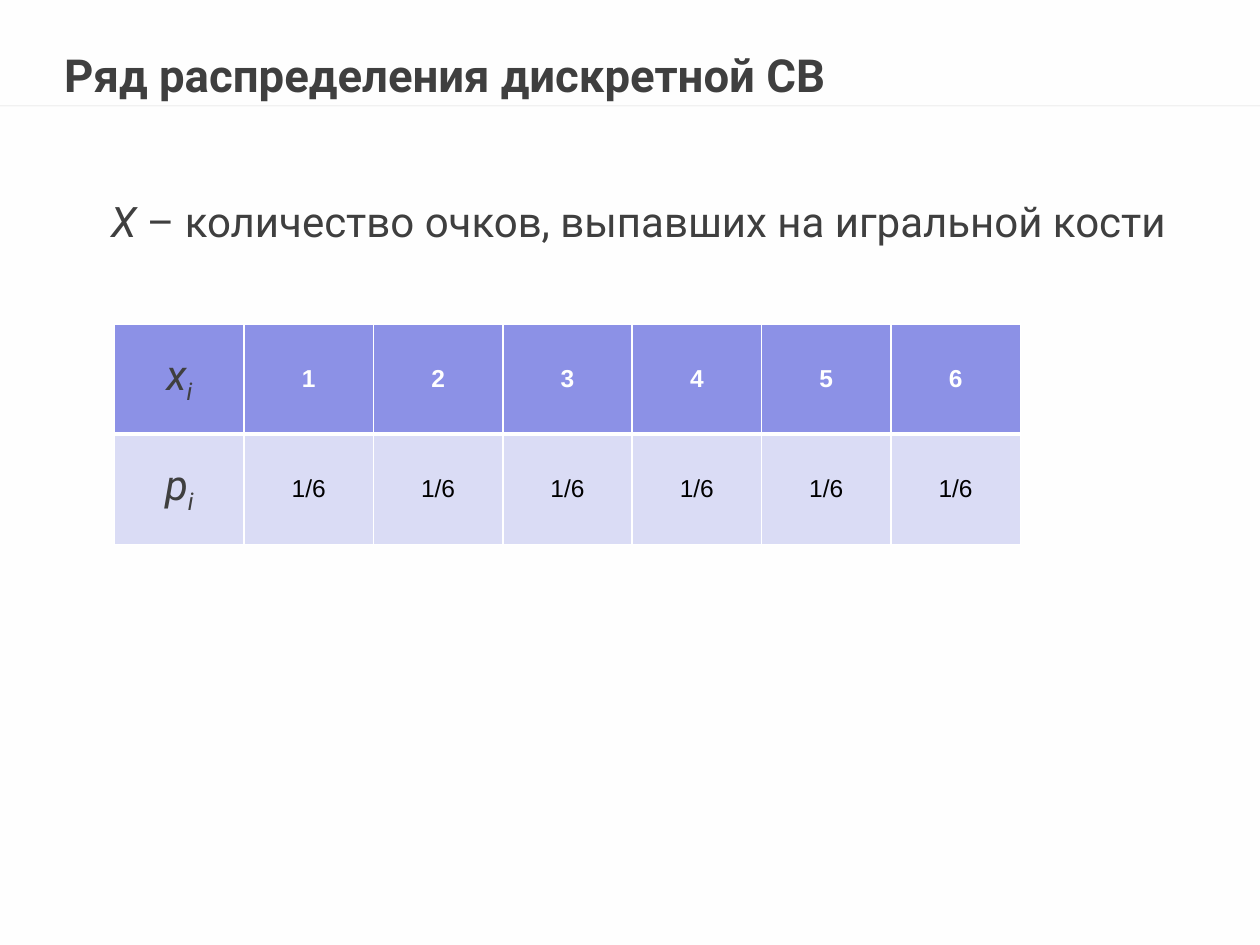
from lxml import etree
from pptx import Presentation
from pptx.dml.color import RGBColor
from pptx.enum.shapes import MSO_CONNECTOR as Connector, MSO_SHAPE as Shape
from pptx.enum.text import MSO_ANCHOR as Anchor, MSO_AUTO_SIZE as AutoSize, PP_ALIGN as Align
from pptx.oxml.ns import qn
from pptx.util import Inches, Pt

COLORS = {
    "background": "FEFEFE", "white": "FFFFFF", "rule": "7F7F7F", "text": "3F3F3F",
    "black": "000000", "header": "8C91E6", "body": "DADCF5",
}


class SlideBuilder:
    font = "Roboto"
    table_font = "Arial"

    def __init__(self, presentation):
        self.slide = presentation.slides.add_slide(presentation.slide_layouts[5])
        self.paint(self.slide.background.fill, "background")

    def paint(self, fill, color, alpha=None):
        fill.solid()
        fill.fore_color.rgb = RGBColor.from_string(COLORS[color])
        if alpha is not None:
            element = fill._xPr.find(qn("a:solidFill"))[0]
            etree.SubElement(element, qn("a:alpha"), val=str(alpha * 1000))

    def style(self, font, size, color, name=None, bold=False, italic=None):
        font.name = name or self.font
        font.size = Pt(size)
        font.bold = bold
        font.italic = italic
        font.color.rgb = RGBColor.from_string(COLORS[color])

    def frame(self, shape, box, anchor):
        shape.left, shape.top, shape.width, shape.height = map(Inches, box)
        frame = shape.text_frame
        frame.margin_left = frame.margin_top = frame.margin_right = frame.margin_bottom = 0
        frame.word_wrap = True
        frame.auto_size = AutoSize.NONE
        frame.vertical_anchor = anchor
        return frame

    def band(self, *box):
        shape = self.slide.shapes.add_shape(Shape.RECTANGLE, *map(Inches, box))
        shape.shadow.inherit = False
        shape.line.fill.background()
        self.paint(shape.fill, "white", alpha=50)

    def rule(self, *ends):
        line = self.slide.shapes.add_connector(Connector.STRAIGHT, *map(Inches, ends))
        line.line.width = Pt(0.75)
        self.paint(line.line.fill, "rule", alpha=10)
        etree.SubElement(line._element.spPr, qn("a:effectLst"))

    def title(self, text, *box):
        shape = self.slide.shapes.title
        self.slide.shapes._spTree.append(shape._element)  # in front of the band
        paragraph = self.frame(shape, box, Anchor.MIDDLE).paragraphs[0]
        paragraph.text = text
        paragraph.alignment = Align.LEFT
        paragraph.line_spacing = 0.8
        self.style(paragraph.font, 26, "text", bold=True)

    def definition(self, symbol, meaning, *box):
        shape = self.slide.shapes.add_textbox(*map(Inches, box))
        paragraph = self.frame(shape, box, Anchor.TOP).paragraphs[0]
        self.style(paragraph.font, 24, "text")
        run = paragraph.add_run()
        run.text = symbol
        run.font.italic = True
        paragraph.add_run().text = meaning

    def borders(self, cell, **widths):
        properties = cell._tc.get_or_add_tcPr()
        for index, side in enumerate("LRTB"):
            line = etree.Element(qn(f"a:ln{side}"), w=str(Pt(widths.get(side, 1))))
            fill = etree.SubElement(line, qn("a:solidFill"))
            etree.SubElement(fill, qn("a:srgbClr"), val=COLORS["white"])
            properties.insert(index, line)

    def table(self, rows, *box):
        table = self.slide.shapes.add_table(len(rows), len(rows[0]), *map(Inches, box)).table
        for row_index, values in enumerate(rows):
            header = row_index == 0
            for column_index, value in enumerate(values):
                cell = table.cell(row_index, column_index)
                cell.vertical_anchor = Anchor.MIDDLE
                self.paint(cell.fill, "header" if header else "body")
                self.borders(cell, **{"B" if header else "T": 3})
                paragraph = cell.text_frame.paragraphs[0]
                paragraph.alignment = Align.CENTER
                if column_index == 0:
                    self.style(paragraph.font, 24, "text", italic=True)
                    paragraph.add_run().text = value
                    subscript = paragraph.add_run()
                    subscript.text = "i"
                    subscript.font._element.set("baseline", "-25000")
                else:
                    paragraph.text = value
                    self.style(paragraph.font, 14, "white" if header else "black",
                               self.table_font, bold=header)


def main():
    presentation = Presentation()
    presentation.slide_width, presentation.slide_height = Inches(10), Inches(7.5)
    builder = SlideBuilder(presentation)

    # Title band
    builder.band(0, 0, 10, 0.84)
    builder.rule(0, 0.84, 10, 0.84)
    builder.title("Ряд распределения дискретной СВ", 0.51, 0.21, 8.82, 0.84)

    # Distribution of the die roll
    faces = [str(face) for face in range(1, 7)]
    builder.table([["x", *faces], ["p", *["1/6"] * len(faces)]], 0.91, 2.57, 7.19, 1.75)
    builder.definition("X", " – количество очков, выпавших на игральной кости",
                       0.88, 1.55, 8.45, 0.94)

    presentation.save("out.pptx")


if __name__ == "__main__":
    main()
